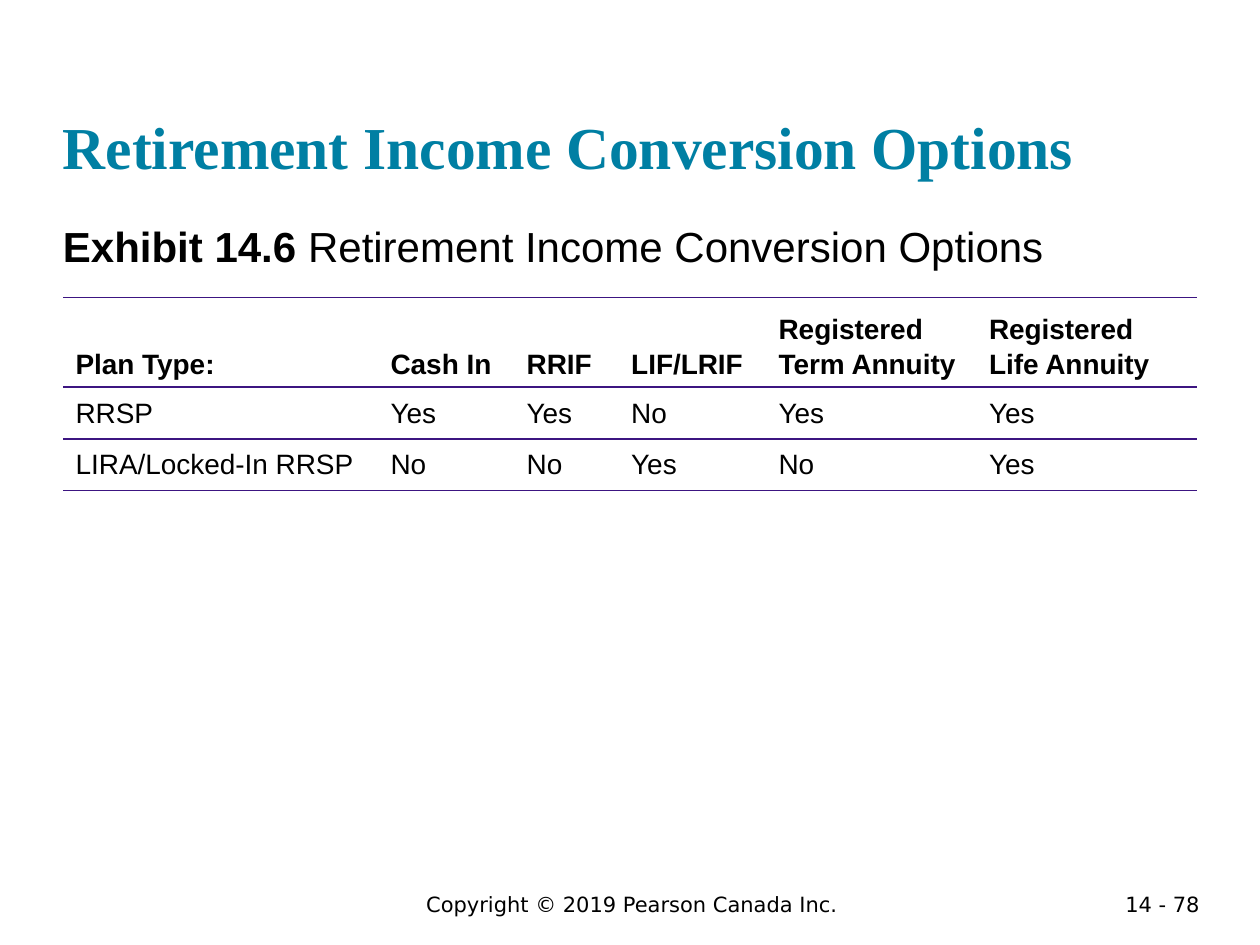
from dataclasses import dataclass

from lxml.etree import SubElement
from pptx import Presentation
from pptx.dml.color import RGBColor
from pptx.enum.text import MSO_ANCHOR, PP_ALIGN
from pptx.oxml.ns import qn
from pptx.util import Inches, Pt


@dataclass(frozen=True)
class Theme:
    ink: str = "000000"
    teal: str = "007FA3"
    rule: str = "3C1581"
    head: str = "Times New Roman"
    body: str = "Arial"
    foot: str = "DejaVu Sans"
    title: int = 34
    lead: int = 24
    cell: int = 16
    small: int = 12
    line: int = 1


THEME = Theme()
PLAIN = "{2D5ABB26-0587-4C30-8999-92F81FD0307C}"
COLS = (2.5, 1.08, 0.83, 1.17, 1.67, 1.75)
ROWS = (0.67, 0.41, 0.41)
PLANS = (
    ("Plan Type:", "Cash In", "RRIF", "LIF/LRIF",
     "Registered Term Annuity", "Registered Life Annuity"),
    ("RRSP", "Yes", "Yes", "No", "Yes", "Yes"),
    ("LIRA/Locked-In RRSP", "No", "No", "Yes", "No", "Yes"),
)


def put(item, values):
    for name, value in values.items():
        setattr(item, name, value)


def add_run(para, text, face, size, color=THEME.ink, bold=False):
    run = para.add_run()
    run.text = text
    put(run.font, {"name": face, "size": Pt(size), "bold": bold})
    run.font.color.rgb = RGBColor.from_string(color)


def add_text(slide, box, runs, align=PP_ALIGN.LEFT, **frame):
    """Each run is the text followed by the arguments of add_run."""
    area = slide.shapes.add_textbox(*map(Inches, box)).text_frame
    put(area, {"word_wrap": True, **frame})
    para = area.paragraphs[0]
    para.alignment = align
    for run in runs:
        add_run(para, *run)


def add_rule(cell, side):
    line = SubElement(cell._tc.get_or_add_tcPr(), qn(f"a:{side}"),
                      w=str(Pt(THEME.line)))
    fill = SubElement(line, qn("a:solidFill"))
    SubElement(fill, qn("a:srgbClr"), val=THEME.rule)


def fill_cell(cell, text, head, sides):
    for side in sides:
        add_rule(cell, side)
    cell.fill.background()
    cell.vertical_anchor = MSO_ANCHOR.BOTTOM if head else MSO_ANCHOR.TOP
    para = cell.text_frame.paragraphs[0]
    para.line_spacing = 1.15
    add_run(para, text, THEME.body, THEME.cell, bold=head)


def add_plans(slide):
    box = (0.5, 2.36, sum(COLS), sum(ROWS))
    frame = slide.shapes.add_table(len(ROWS), len(COLS), *map(Inches, box))
    table = frame.table
    put(table, {"first_row": False, "horz_banding": False})
    table._tbl.tblPr.find(qn("a:tableStyleId")).text = PLAIN
    for col, width in zip(table.columns, COLS):
        col.width = Inches(width)
    rules = (("lnT", "lnB"), ("lnT",), ("lnB",))
    for r, (row, high) in enumerate(zip(table.rows, ROWS)):
        row.height = Inches(high)
        for cell, text in zip(row.cells, PLANS[r]):
            fill_cell(cell, text, r == 0, rules[r])


def main():
    deck = Presentation()
    put(deck, {"slide_width": Inches(10), "slide_height": Inches(7.5)})
    slide = deck.slides.add_slide(deck.slide_layouts[6])
    flush = {f"margin_{side}": 0 for side in ("left", "top", "right", "bottom")}
    note = (THEME.foot, THEME.small)
    lead = (THEME.body, THEME.lead, THEME.ink)

    add_text(slide, (1.64, 7.03, 6.75, 0.3),
             [("Copyright © 2019 Pearson Canada Inc.", *note)], PP_ALIGN.CENTER)
    add_text(slide, (8.62, 7.03, 1, 0.22), [("14 - 78", *note)], PP_ALIGN.RIGHT)
    add_text(slide, (0.5, 0.24, 9, 1.2),
             [("Retirement Income Conversion Options",
               THEME.head, THEME.title, THEME.teal, True)],
             vertical_anchor=MSO_ANCHOR.BOTTOM, **flush)
    add_text(slide, (0.5, 1.75, 9, 0.58),
             [("Exhibit 14.6 ", *lead, True),
              ("Retirement Income Conversion Options", *lead)], **flush)
    add_plans(slide)
    deck.save("out.pptx")


if __name__ == "__main__":
    main()
